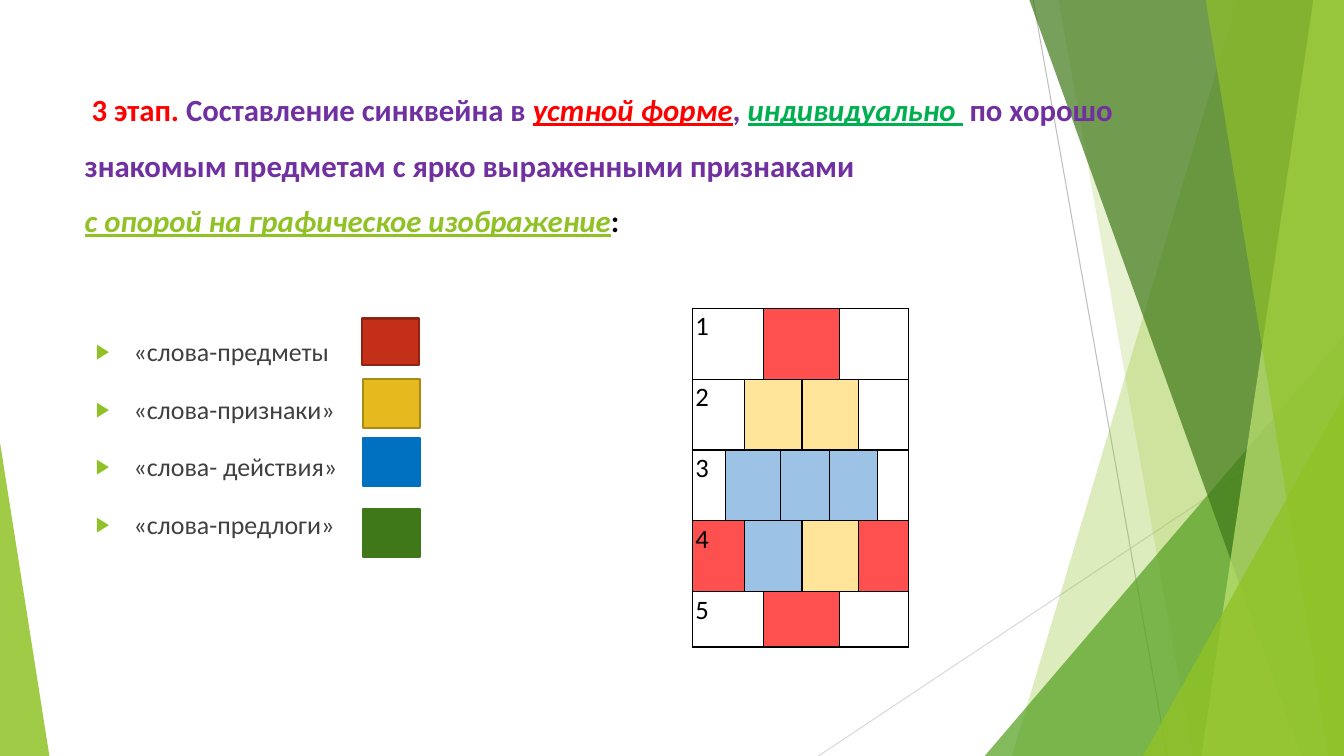
"""Build the slide on composing a cinquain orally with a graphic scheme."""
import pptx
import pptx.util
import pptx.dml.color
import pptx.enum.shapes
import pptx.enum.text
import pptx.oxml
import pptx.oxml.ns
from lxml import etree

Pt = pptx.util.Pt
RGB = pptx.dml.color.RGBColor
SHAPE = pptx.enum.shapes.MSO_SHAPE
qn = pptx.oxml.ns.qn

BLACK = RGB(0, 0, 0)
CHARCOAL = RGB(0x40, 0x40, 0x40)
RED = RGB(0xFF, 0, 0)
PURPLE = RGB(0x70, 0x30, 0xA0)
EMERALD = RGB(0, 0xB0, 0x50)
LIME = RGB(0x90, 0xC2, 0x26)
PALE_LIME = RGB(0xC0, 0xE4, 0x74)
GRASS = RGB(0x54, 0xA0, 0x21)
FOREST = RGB(0x3F, 0x78, 0x19)
GRAY = RGB(0xBF, 0xBF, 0xBF)
LIGHT_GRAY = RGB(0xD9, 0xD9, 0xD9)
BRICK = RGB(0xC4, 0x2F, 0x1A)
DARK_BRICK = RGB(0x91, 0x23, 0x13)
GOLD = RGB(0xE6, 0xB9, 0x1E)
DARK_GOLD = RGB(0xAA, 0x89, 0x16)
BLUE = RGB(0, 0x70, 0xC0)
CORAL = RGB(0xFF, 0x50, 0x50)
CREAM = RGB(0xFF, 0xE5, 0x99)
SKY = RGB(0x9C, 0xC2, 0xE5)

WIDTH, HEIGHT = 960, 540
FONT = "Calibri"

HEADING_LINES = [
    [(" 3 этап. ", RED, False),
     ("Составление синквейна в ", PURPLE, False),
     ("устной форме", RED, True),
     (", ", PURPLE, False),
     ("индивидуально ", EMERALD, True),
     (" по хорошо знакомым предметам с ярко выраженными признаками ", PURPLE, False)],
    [("с опорой на графическое изображение", LIME, True),
     (":", BLACK, False)],
]
WORD_KINDS = ["«слова-предметы", "«слова-признаки»", "«слова- действия»", "«слова-предлоги»"]
KEY_SQUARES = [
    (258.5, 227.5, 33, BRICK, DARK_BRICK),
    (259.2, 270.7, 35, GOLD, DARK_GOLD),
    (259.2, 313, 34, BLUE, BLUE),
    (259.2, 363.6, 34, FOREST, FOREST),
]

SCHEME_COLUMNS = [23.6, 13.6, 13.6, 12.2, 15.4, 19.6, 7.2, 13.6, 13.6, 21.9]
SCHEME_ROWS = [50.6, 50.6, 50.6, 50.6, 39.6]
ONE_WORD = [(3, None), (4, CORAL), (3, None)]
SCHEME = [
    ONE_WORD,
    [(2, None), (3, CREAM), (3, CREAM), (2, None)],
    [(1, None), (3, SKY), (2, SKY), (3, SKY), (1, None)],
    [(2, CORAL), (3, SKY), (3, CREAM), (2, CORAL)],
    ONE_WORD,
]

RAYS = [((738, 0), (833.8, 540), GRAY), ((960, 290.2), (584.6, 540), LIGHT_GRAY)]
BANDS_BEHIND = [(884.2, 722.9, LIME, 30), (756, 851.8, LIME, 20)]
BANDS_FRONT = [(735.1, 929.5, FOREST, 70), (938.2, 858.2, PALE_LIME, 70), (861.1, 949, LIME, 65)]
WEDGE_BEHIND = (703.4, 239.8, 256.6, 1, GRASS, 72)
WEDGES_FRONT = [(816.5, 283, 143.5, 1, LIME, 80), (0, 316.1, 35.3, 0, LIME, 85)]


def add_text(paragraph, text, *, size, color, bold=False, accent=False):
    run = paragraph.add_run()
    run.text = text
    font = run.font
    font.name, font.size, font.bold = FONT, Pt(size), bold
    font.italic = font.underline = accent
    font.color.rgb = color


def paint(shape, color, opacity=100, outline=None):
    shape.shadow.inherit = False
    shape.fill.solid()
    shape.fill.fore_color.rgb = color
    if opacity < 100:
        tint = shape.element.spPr.find(qn("a:solidFill"))[0]
        etree.SubElement(tint, qn("a:alpha"), val=str(opacity * 1000))
    if outline is None:
        shape.line.fill.background()
    else:
        shape.line.color.rgb = outline
        shape.line.width = Pt(1.5)


def add_ray(shapes, start, end, color):
    ray = shapes.add_connector(
        pptx.enum.shapes.MSO_CONNECTOR.STRAIGHT, *(Pt(v) for v in start + end))
    ray.line.color.rgb = color
    ray.line.width = Pt(0.75)
    etree.SubElement(ray.element.spPr, qn("a:effectLst"))


def add_band(shapes, top_x, bottom_x, color, opacity):
    outline = shapes.build_freeform(Pt(top_x), Pt(-0.5))
    corners = [(WIDTH, -0.5), (WIDTH, HEIGHT), (bottom_x, HEIGHT)]
    outline.add_line_segments([(Pt(x), Pt(y)) for x, y in corners], close=True)
    paint(outline.convert_to_shape(), color, opacity)


def add_wedge(shapes, left, top, width, apex, color, opacity):
    wedge = shapes.add_shape(
        SHAPE.ISOSCELES_TRIANGLE, Pt(left), Pt(top), Pt(width), Pt(HEIGHT - top))
    wedge.adjustments[0] = apex
    paint(wedge, color, opacity)


def add_backdrop(shapes):
    for ray in RAYS:
        add_ray(shapes, *ray)
    for band in BANDS_BEHIND:
        add_band(shapes, *band)
    add_wedge(shapes, *WEDGE_BEHIND)
    for band in BANDS_FRONT:
        add_band(shapes, *band)
    for wedge in WEDGES_FRONT:
        add_wedge(shapes, *wedge)


def place(holder, left, top, width, height):
    holder.left, holder.top = Pt(left), Pt(top)
    holder.width, holder.height = Pt(width), Pt(height)
    frame = holder.text_frame
    frame.word_wrap = True
    frame.auto_size = pptx.enum.text.MSO_AUTO_SIZE.NONE
    frame.vertical_anchor = pptx.enum.text.MSO_ANCHOR.TOP
    tree = holder.element.getparent()
    tree.append(holder.element)
    return frame


def add_heading(holder):
    heading = place(holder, 53.3, 48.2, 815.8, 128.2).paragraphs[0]
    heading.alignment = pptx.enum.text.PP_ALIGN.LEFT
    heading.line_spacing = 1.5
    for number, line in enumerate(HEADING_LINES):
        if number:
            heading.add_line_break()
        for text, color, accent in line:
            add_text(heading, text, size=22, color=color, bold=True, accent=accent)


def add_word_kinds(holder):
    frame = place(holder, 61.2, 227.5, 324, 288.7)
    for number, kind in enumerate(WORD_KINDS):
        item = frame.add_paragraph() if number else frame.paragraphs[0]
        item.line_spacing = 1.4
        item.space_before = Pt(10)
        add_text(item, kind, size=18.5, color=CHARCOAL)
        props = item._p.get_or_add_pPr()
        props.set("marL", str(Pt(27)))
        props.set("indent", str(Pt(-27)))
        tint = etree.SubElement(props, qn("a:buClr"))
        etree.SubElement(tint, qn("a:srgbClr"), val=str(LIME))
        etree.SubElement(props, qn("a:buSzPct"), val="80000")
        etree.SubElement(props, qn("a:buChar"), char="▶")


def style_cell(cell, color):
    cell.margin_left = cell.margin_right = Pt(2.2)
    cell.margin_top = cell.margin_bottom = 0
    if color is None:
        cell.fill.background()
    else:
        cell.fill.solid()
        cell.fill.fore_color.rgb = color
    props = cell._tc.get_or_add_tcPr()
    for position, side in enumerate(("a:lnL", "a:lnR", "a:lnT", "a:lnB")):
        border = etree.Element(qn(side), w=str(Pt(1)))
        ink = etree.SubElement(border, qn("a:solidFill"))
        etree.SubElement(ink, qn("a:srgbClr"), val=str(BLACK))
        props.insert(position, border)


def add_scheme(shapes):
    scheme = shapes.add_table(
        len(SCHEME_ROWS), len(SCHEME_COLUMNS), Pt(494.5), Pt(220.2),
        Pt(sum(SCHEME_COLUMNS)), Pt(sum(SCHEME_ROWS))).table
    scheme.first_row = scheme.horz_banding = False
    for column, width in zip(scheme.columns, SCHEME_COLUMNS):
        column.width = Pt(width)
    for row, height in zip(scheme.rows, SCHEME_ROWS):
        row.height = Pt(height)
    for r, blocks in enumerate(SCHEME):
        start = 0
        for span, color in blocks:
            for c in range(start, start + span):
                style_cell(scheme.cell(r, c), color)
            if span > 1:
                scheme.cell(r, start).merge(scheme.cell(r, start + span - 1))
            start += span
        label = scheme.cell(r, 0).text_frame.paragraphs[0]
        label.line_spacing = 1.07
        add_text(label, str(r + 1), size=19, color=BLACK)


def main():
    deck = pptx.Presentation()
    deck.slide_width, deck.slide_height = Pt(WIDTH), Pt(HEIGHT)
    slide = deck.slides.add_slide(deck.slide_layouts[1])
    add_backdrop(slide.shapes)
    add_heading(slide.shapes.title)
    add_word_kinds(slide.placeholders[1])
    add_scheme(slide.shapes)
    for left, top, height, color, outline in KEY_SQUARES:
        square = slide.shapes.add_shape(
            SHAPE.RECTANGLE, Pt(left), Pt(top), Pt(41), Pt(height))
        paint(square, color, outline=outline)
    deck.save("out.pptx")


if __name__ == "__main__":
    main()
